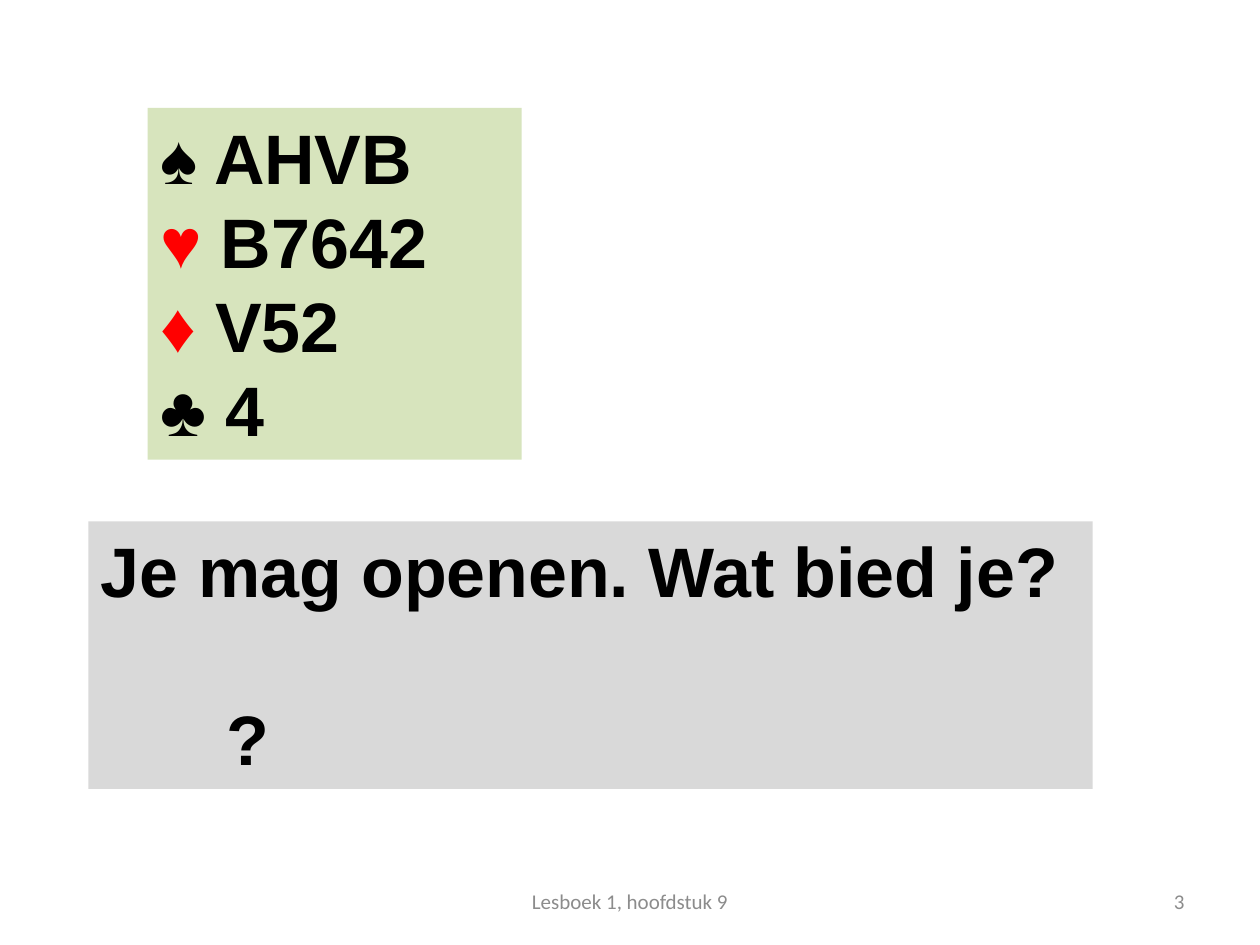
import pptx
import pptx.util
import pptx.dml.color
import pptx.enum.shapes
import pptx.enum.text

Pt = pptx.util.Pt
ALIGN = pptx.enum.text.PP_ALIGN
ANCHOR = pptx.enum.text.MSO_ANCHOR

COLORS = {
    "hand": "D7E4BD",
    "panel": "D9D9D9",
    "text": "000000",
    "red": "FF0000",
    "footer": "8C8C8C",
}
HAND = [("♠", "AHVB", "text"), ("♥", "B7642", "red"),
        ("♦", "V52", "red"), ("♣", "4", "text")]


def rgb(name):
    return pptx.dml.color.RGBColor.from_string(COLORS[name])


def style(run, color, size=40, font="Arial", bold=True):
    run.font.name = font
    run.font.size = Pt(size)
    run.font.bold = bold
    run.font.color.rgb = rgb(color)


def add_panel(slide, box, fill):
    """Add a plain filled rectangle and return its text frame."""
    shape = slide.shapes.add_shape(
        pptx.enum.shapes.MSO_SHAPE.RECTANGLE, *map(Pt, box))
    shape.shadow.inherit = False
    shape.fill.solid()
    shape.fill.fore_color.rgb = rgb(fill)
    shape.line.fill.background()
    frame = shape.text_frame
    frame.word_wrap = True
    frame.vertical_anchor = ANCHOR.TOP
    return frame


def add_hand(slide, box):
    frame = add_panel(slide, box, "hand")
    frame.text = "\n".join(suit for suit, cards, color in HAND)
    for line, (suit, cards, color) in zip(frame.paragraphs, HAND):
        line.alignment = ALIGN.LEFT
        style(line.runs[0], color)
        run = line.add_run()
        run.text = " " + cards
        style(run, "text")


def add_question(slide, box):
    frame = add_panel(slide, box, "panel")
    frame.text = "Je mag openen. Wat bied je?\n?"
    for line in frame.paragraphs:
        line.alignment = ALIGN.LEFT
        style(line.runs[0], "text")
    answer = frame.paragraphs[1]
    answer.space_before = Pt(48)
    answer._p.get_or_add_pPr().set("marL", str(Pt(72)))


def add_footer(slide, box, text, align):
    frame = slide.shapes.add_textbox(*map(Pt, box)).text_frame
    frame.word_wrap = True
    frame.vertical_anchor = ANCHOR.MIDDLE
    frame.text = text
    line = frame.paragraphs[0]
    line.alignment = align
    style(line.runs[0], "footer", 12, "Calibri", False)


def main():
    deck = pptx.Presentation()
    deck.slide_width, deck.slide_height = Pt(720), Pt(540)
    slide = deck.slides.add_slide(deck.slide_layouts[6])
    add_hand(slide, (84.4, 61.7, 213.7, 201))
    add_question(slide, (50.6, 298, 573.8, 152.8))
    add_footer(slide, (516, 500.5, 168, 28.75), "3", ALIGN.RIGHT)
    add_footer(slide, (246, 500.5, 228, 28.75),
               "Lesboek 1, hoofdstuk 9", ALIGN.CENTER)
    deck.save("out.pptx")


if __name__ == "__main__":
    main()
